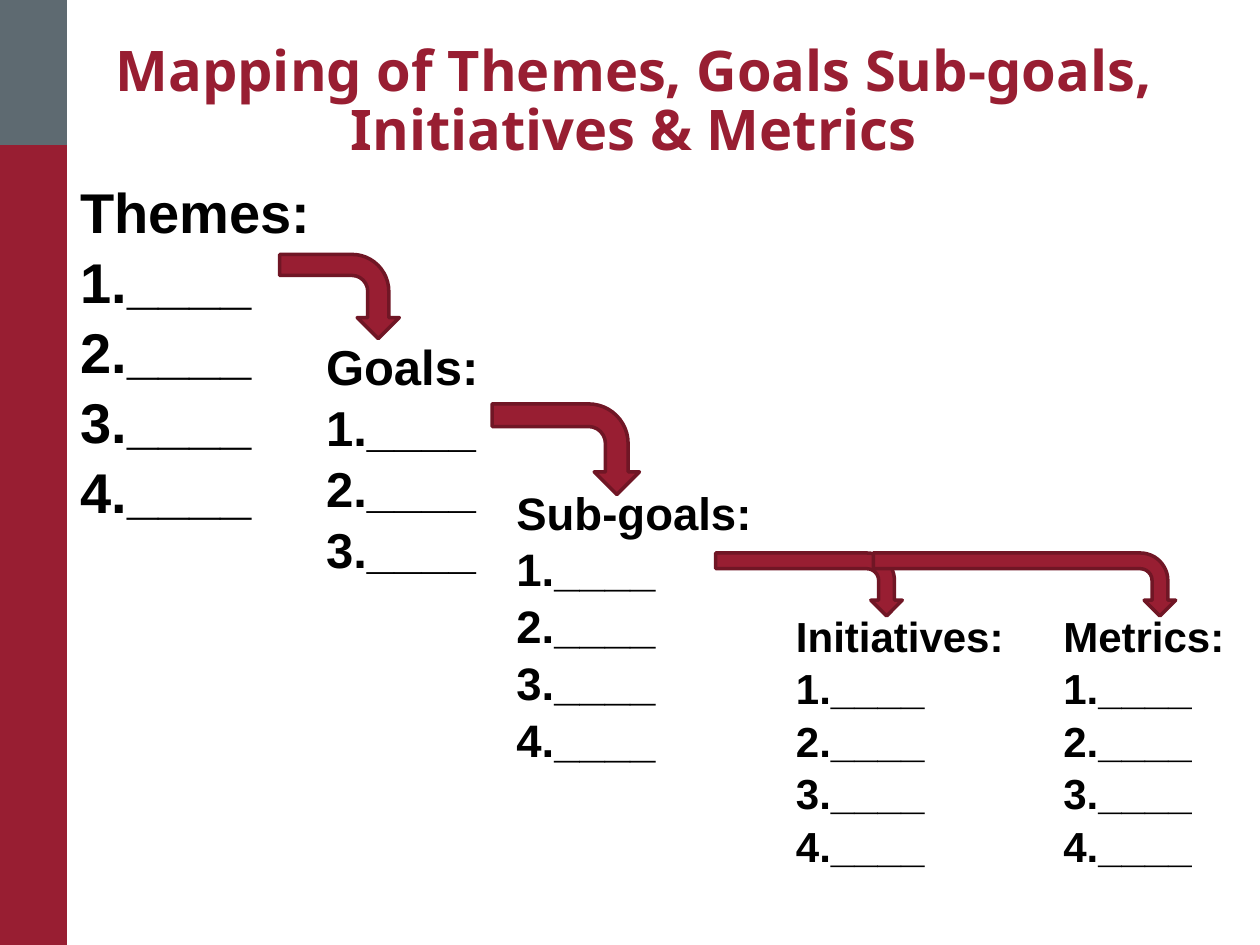
"""Build a slide that maps themes to goals, sub-goals, initiatives and metrics."""
from pptx import Presentation
from pptx.dml.color import RGBColor
from pptx.enum.shapes import MSO_SHAPE as SHAPE
from pptx.enum.text import MSO_ANCHOR as ANCHOR, PP_ALIGN as ALIGN
from pptx.util import Pt


def rgb(value):
    """Return the colour for a hex string."""
    return RGBColor.from_string(value)


class Deck:
    """Hold the style and the current slide."""

    crimson, dark, gray, black = "981E32", "701625", "5E6A71", "000000"
    title_font, body_font = "Noto Sans", "Arial"

    def __init__(self):
        """Start a presentation with one title-only slide."""
        self.prs = Presentation()
        self.prs.slide_width, self.prs.slide_height = Pt(720), Pt(540)
        self.s = self.prs.slides.add_slide(self.prs.slide_layouts[5])

    def font(self, p, name, size, color):
        """Set the bold font of a paragraph."""
        f = p.font
        f.name, f.size, f.bold = name, Pt(size), True
        f.color.rgb = rgb(color)

    def shape(self, kind, x, y, w, h, fill):
        """Add a filled shape without line or shadow."""
        sp = self.s.shapes.add_shape(kind, Pt(x), Pt(y), Pt(w), Pt(h))
        sp.shadow.inherit = False
        sp.fill.solid()
        sp.fill.fore_color.rgb = rgb(fill)
        sp.line.fill.background()
        return sp

    def title(self, text, x, y, w, h):
        """Place and format the title placeholder."""
        sp = self.s.shapes.title
        sp.left, sp.top, sp.width, sp.height = Pt(x), Pt(y), Pt(w), Pt(h)
        tf = sp.text_frame
        tf.text, tf.word_wrap = text, True
        tf.vertical_anchor = ANCHOR.BOTTOM
        tf.margin_left = tf.margin_right = Pt(36)
        p = tf.paragraphs[0]
        p.alignment, p.line_spacing = ALIGN.CENTER, 0.88
        self.font(p, self.title_font, 32, self.crimson)

    def blanks(self, heading, count, size, x, y, w, h):
        """Add a heading with numbered blanks to fill in."""
        sp = self.s.shapes.add_textbox(Pt(x), Pt(y), Pt(w), Pt(h))
        tf = sp.text_frame
        tf.word_wrap = False
        tf.text = "\n".join([heading] + [f"{n}.____" for n in range(1, count + 1)])
        for p in tf.paragraphs:
            p.line_spacing = 1.04
            self.font(p, self.body_font, size, self.black)

    def arrow(self, x, y, w, h):
        """Add an arrow that runs right and turns down, given its visible box."""
        left, top = x + (w - h) / 2, y + (h - w) / 2
        sp = self.shape(SHAPE.BENT_ARROW, left, top, h, w, self.crimson)
        sp.rotation = 90
        sp.line.color.rgb = rgb(self.dark)
        sp.line.width = Pt(2)


def main():
    """Build and save the slide."""
    deck = Deck()
    deck.shape(SHAPE.RECTANGLE, 0, 82.8, 38.2, 457.2, deck.crimson)
    deck.shape(SHAPE.RECTANGLE, 0, 0, 38.2, 82.8, deck.gray)
    deck.title("Mapping of Themes, Goals Sub-goals, Initiatives & Metrics",
               14.4, 11.5, 695.5, 85)
    for block in (
        ("Themes:", 4, 32, 38.9, 96.5, 147.6, 200.9),
        ("Sub-goals:", 4, 26, 288, 272.2, 150.5, 164.9),
        ("Goals:", 3, 28, 179.3, 187.2, 103, 177.1),
        ("Initiatives:", 4, 24, 447.8, 344.2, 134.6, 152.6),
        ("Metrics:", 4, 24, 600.5, 344.2, 107.3, 152.6),
    ):
        deck.blanks(*block)
    for box in (
        (159.8, 145.4, 68.4, 48.2),
        (281.2, 230.8, 84.2, 51.8),
        (409, 316, 106.6, 36),
        (499, 316, 172.8, 36),
    ):
        deck.arrow(*box)
    deck.prs.save("out.pptx")


if __name__ == "__main__":
    main()
